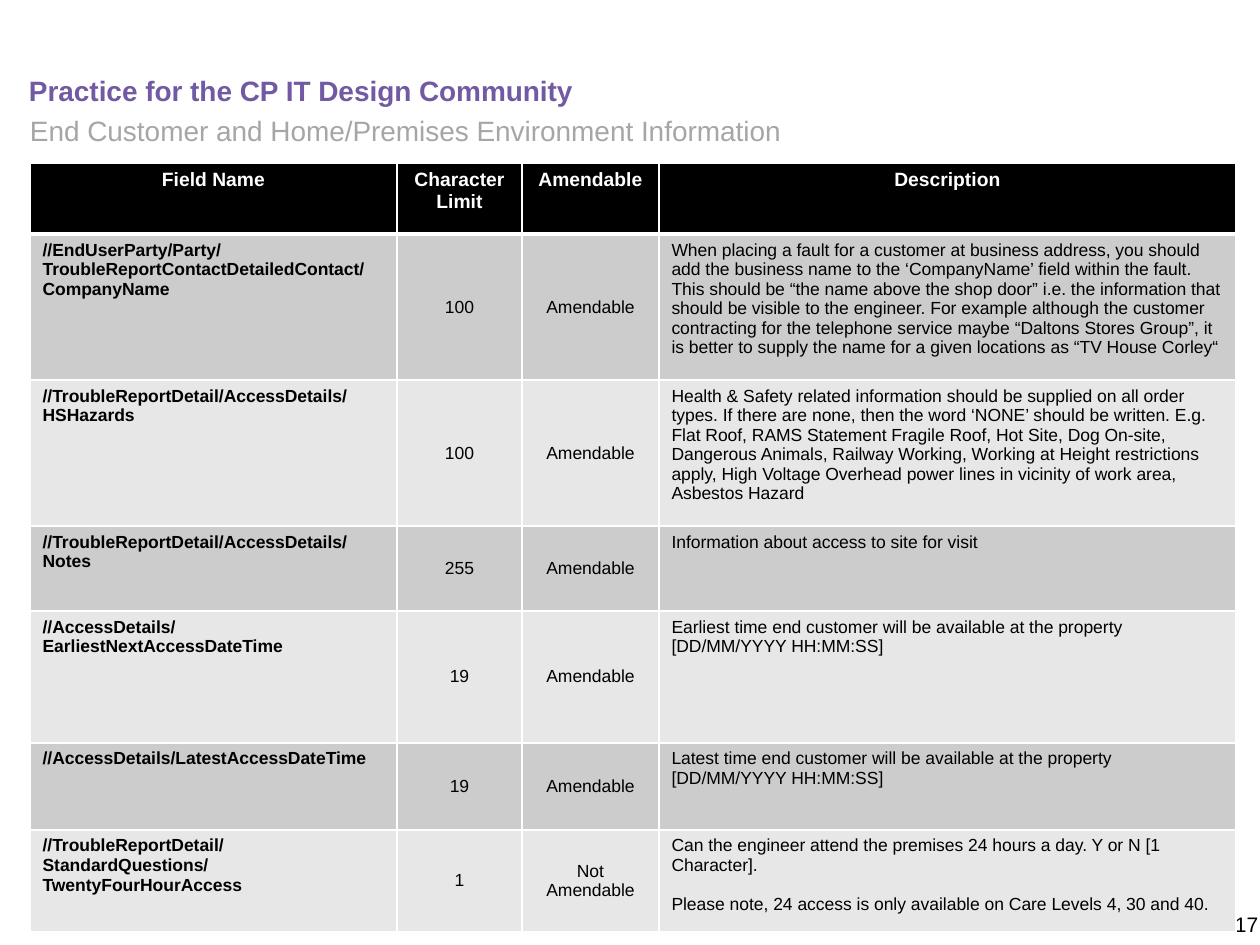
from lxml import etree
from pptx import Presentation
from pptx.dml.color import RGBColor
from pptx.enum.text import MSO_ANCHOR, PP_ALIGN
from pptx.oxml.ns import qn
from pptx.util import Pt

PX = 914400 / 126
LEFT, CENTER = PP_ALIGN.LEFT, PP_ALIGN.CENTER
TOP, MIDDLE = MSO_ANCHOR.TOP, MSO_ANCHOR.MIDDLE

WHITE = RGBColor(0xFF, 0xFF, 0xFF)
BLACK = RGBColor(0, 0, 0)
PURPLE = RGBColor(0x71, 0x5A, 0xA3)
GREY = RGBColor(0xA6, 0xA6, 0xA6)
DARK = RGBColor(0xCC, 0xCC, 0xCC)
LIGHT = RGBColor(0xE7, 0xE7, 0xE7)

COLS = [367, 125, 137, 577]
HEIGHTS = [71, 146, 146, 85, 132, 87, 102]
ROWS = [
    ["Field Name", "Character Limit", "Amendable", "Description"],
    ["//EndUserParty/Party/TroubleReportContactDetailedContact/CompanyName",
     "100", "Amendable",
     "When placing a fault for a customer at business address, you should "
     "add the business name to the ‘CompanyName’ field within the fault. "
     "This should be “the name above the shop door” i.e. the information "
     "that should be visible to the engineer. For example although the "
     "customer contracting for the telephone service maybe “Daltons Stores "
     "Group”, it is better to supply the name for a given locations as "
     "“TV House Corley“"],
    ["//TroubleReportDetail/AccessDetails/HSHazards", "100", "Amendable",
     "Health & Safety related information should be supplied on all order "
     "types. If there are none, then the word ‘NONE’ should be written. "
     "E.g. Flat Roof, RAMS Statement Fragile Roof, Hot Site, Dog On-site, "
     "Dangerous Animals, Railway Working, Working at Height restrictions "
     "apply, High Voltage Overhead power lines in vicinity of work area, "
     "Asbestos Hazard"],
    ["//TroubleReportDetail/AccessDetails/Notes", "255", "Amendable",
     "Information about access to site for visit"],
    ["//AccessDetails/EarliestNextAccessDateTime", "19", "Amendable",
     "Earliest time end customer will be available at the property "
     "[DD/MM/YYYY HH:MM:SS]"],
    ["//AccessDetails/LatestAccessDateTime", "19", "Amendable",
     "Latest time end customer will be available at the property "
     "[DD/MM/YYYY HH:MM:SS]"],
    ["//TroubleReportDetail/StandardQuestions/TwentyFourHourAccess",
     "1", "Not\nAmendable",
     "Can the engineer attend the premises 24 hours a day. Y or N "
     "[1 Character].\n"
     "Please note, 24 access is only available on Care Levels 4, 30 and 40."],
]


class Page:
    def __init__(self, deck, font="Arial"):
        self.slide = deck.slides.add_slide(deck.slide_layouts[6])
        self.font = font

    def emu(self, *sizes):
        return [round(size * PX) for size in sizes]

    def style(self, frame, text, size, color, bold=False, align=LEFT):
        """Set the text of a frame and format its runs."""
        frame.text = text
        for para in frame.paragraphs:
            para.alignment = align
            for run in para.runs:
                font = run.font
                font.name, font.size, font.bold = self.font, Pt(size), bold
                font.color.rgb = color

    def text(self, box, text, size, color, bold=False, wrap=True):
        frame = self.slide.shapes.add_textbox(*self.emu(*box)).text_frame
        frame.margin_left = frame.margin_right = 0
        frame.margin_top = frame.margin_bottom = 0
        frame.word_wrap = wrap
        self.style(frame, text, size, color, bold)

    def edge(self, cell, side, width):
        """Add one white border; call in the order L, R, T, B before the fill."""
        line = etree.SubElement(cell._tc.get_or_add_tcPr(), qn("a:ln" + side),
                                w=str(Pt(width)))
        fill = etree.SubElement(line, qn("a:solidFill"))
        etree.SubElement(fill, qn("a:srgbClr"), val=str(WHITE))

    def cell(self, cell, row, col, text):
        head = row == 0
        mid = col in (1, 2)
        self.style(cell.text_frame, text, 11 if head else 10,
                   WHITE if head else BLACK, head or col == 0,
                   CENTER if head or mid else LEFT)
        cell.vertical_anchor = MIDDLE if mid and not head else TOP
        self.edge(cell, "L", 1)
        self.edge(cell, "R", 1)
        self.edge(cell, "T", 3 if row == 1 else 1)
        self.edge(cell, "B", 3 if head else 1)
        cell.fill.solid()
        cell.fill.fore_color.rgb = BLACK if head else DARK if row % 2 else LIGHT

    def table(self, left, top, cols, heights, rows):
        box = self.emu(left, top, sum(cols), sum(heights))
        table = self.slide.shapes.add_table(len(rows), len(cols), *box).table
        for col, width in zip(table.columns, self.emu(*cols)):
            col.width = width
        for row, height in zip(table.rows, self.emu(*heights)):
            row.height = height
        for r, row in enumerate(rows):
            for c, text in enumerate(row):
                self.cell(table.cell(r, c), r, c, text)
        return table


def main():
    deck = Presentation()
    deck.slide_width, deck.slide_height = round(1260 * PX), round(945 * PX)
    page = Page(deck)
    page.text((29, 74, 897, 35), "Practice for the CP IT Design Community",
              16, PURPLE, bold=True)
    page.text((30, 114, 897, 65),
              "End Customer and Home/Premises Environment Information", 16, GREY)
    page.text((1235, 911, 26, 34), "17", 12, BLACK, wrap=False)
    table = page.table(30, 163, COLS, HEIGHTS, ROWS)
    note = table.cell(6, 3).text_frame.paragraphs[1]
    note.space_before = Pt(11)
    deck.save("out.pptx")


if __name__ == "__main__":
    main()
